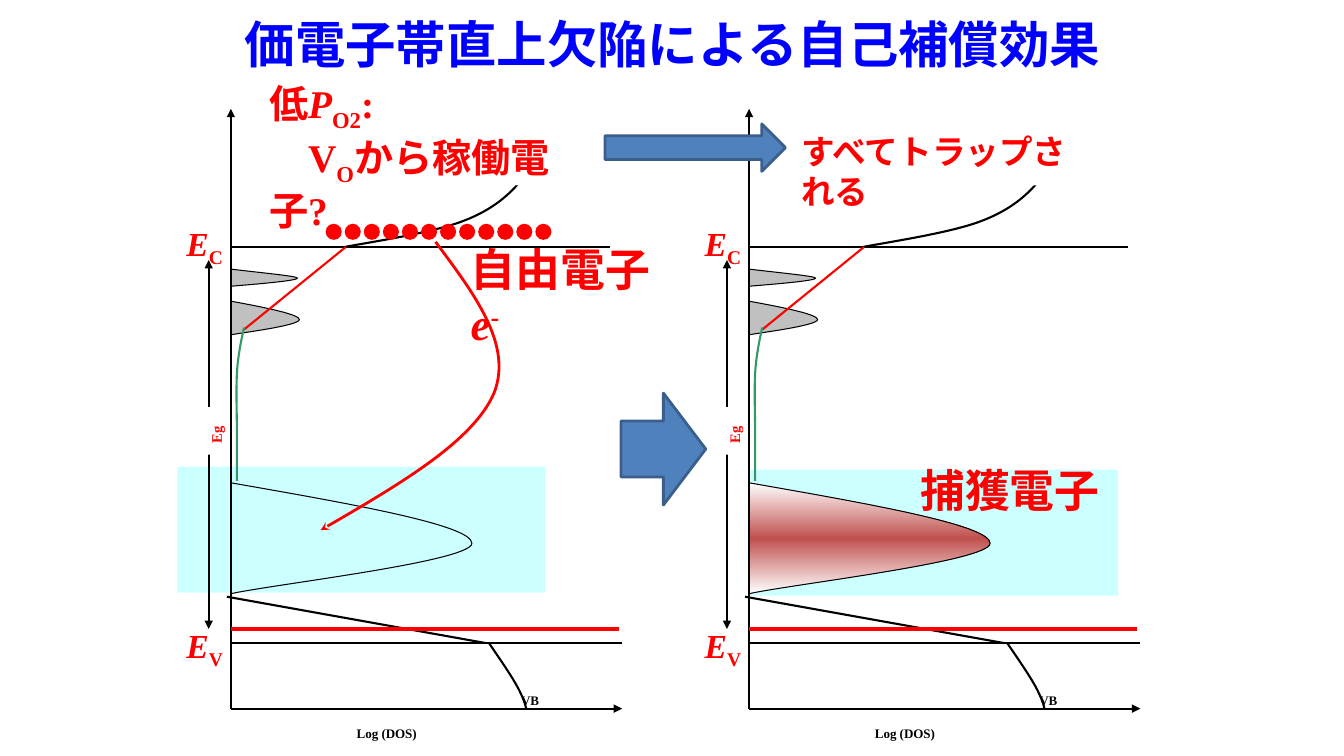
from copy import deepcopy

from pptx import Presentation
from pptx.dml.color import RGBColor
from pptx.enum.lang import MSO_LANGUAGE_ID
from pptx.enum.shapes import MSO_CONNECTOR, MSO_SHAPE
from pptx.enum.text import MSO_ANCHOR, PP_ALIGN
from pptx.oxml.ns import qn
from pptx.oxml.xmlchemy import OxmlElement
from pptx.util import Inches, Pt

BLACK = RGBColor(0x00, 0x00, 0x00)
WHITE = RGBColor(0xFF, 0xFF, 0xFF)
RED = RGBColor(0xFF, 0x00, 0x00)
BLUE = RGBColor(0x00, 0x00, 0xFF)
GREEN = RGBColor(0x33, 0x99, 0x66)
GRAY = RGBColor(0xC0, 0xC0, 0xC0)
CYAN = RGBColor(0xCC, 0xFF, 0xFF)
BRICK = RGBColor(0xC0, 0x50, 0x4D)
ARROW_FILL = RGBColor(0x4F, 0x81, 0xBD)
ARROW_LINE = RGBColor(0x3A, 0x5F, 0x8C)
SERIF = "Times New Roman"

CONDUCTION_BAND = [(1.13, 1.37), (1.33, 1.33), (2.01, 1.23), (2.31, 1.11),
                   (2.6, 1), (2.78, 0.84), (2.9, 0.68),
                   (3.03, 0.53), (3.02, 0.29), (3.05, 0.18)]
VALENCE_BAND = [(2.56, 5.3), (2.67, 5.46), (2.78, 5.62), (2.84, 5.73),
                (2.9, 5.84), (2.92, 5.91), (2.93, 5.95)]
DEEP_TAIL = [(0.06, 3.69), (0.06, 3.62), (0.06, 3.42), (0.06, 3.24),
             (0.06, 3.06), (0.05, 2.8), (0.06, 2.62),
             (0.07, 2.44), (0.11, 2.26), (0.13, 2.17)]
UPPER_DONOR = [(0, 1.59), (0.33, 1.63), (0.66, 1.66), (0.66, 1.68),
               (0.66, 1.71), (0.11, 1.75), (0, 1.76)]
LOWER_DONOR = [(0.01, 1.91), (0.34, 1.97), (0.68, 2.04), (0.68, 2.09),
               (0.68, 2.15), (0.12, 2.22), (0.01, 2.24)]
DEFECT = [(0, 3.71), (1.2, 3.92), (2.39, 4.13), (2.39, 4.31),
          (2.39, 4.49), (0.4, 4.72), (0, 4.81)]
TRAPPING = [(2.03, 1.32), (2.41, 1.83), (2.8, 2.34), (2.61, 2.82),
            (2.41, 3.29), (1.65, 3.74), (0.89, 4.18)]


def add_ends(sp, **ends):
    ln = sp.line._get_or_add_ln()
    for name in ("headEnd", "tailEnd"):
        if name in ends:
            end = OxmlElement(f"a:{name}")
            end.set("type", ends[name])
            ln.append(end)


def add_line(s, x1, y1, x2, y2, color=BLACK, width=1.5, **ends):
    c = s.shapes.add_connector(MSO_CONNECTOR.STRAIGHT, *map(Inches, (x1, y1, x2, y2)))
    c.line.color.rgb = color
    c.line.width = Pt(width)
    add_ends(c, **ends)
    c._element.spPr.append(OxmlElement("a:effectLst"))


def add_block(s, kind, x, y, w, h, fill, line=None):
    sp = s.shapes.add_shape(kind, *map(Inches, (x, y, w, h)))
    sp.shadow.inherit = False
    sp.fill.solid()
    sp.fill.fore_color.rgb = fill
    if line is None:
        sp.line.fill.background()
    else:
        sp.line.color.rgb = line
        sp.line.width = Pt(2)


def bend_segments(sp):
    outline = sp._element.spPr.find(".//" + qn("a:path"))
    segments = outline.findall(qn("a:lnTo"))
    for i in range(0, len(segments), 3):
        bezier = OxmlElement("a:cubicBezTo")
        for segment in segments[i:i + 3]:
            bezier.append(segment[0])
            outline.remove(segment)
        outline.append(bezier)


def add_curve(s, x, y, curve, color=BLACK, width=1.5, fill=None, **ends):
    points = [(Inches(x + px), Inches(y + py)) for px, py in curve]
    builder = s.shapes.build_freeform(*points[0], scale=1.0)
    builder.add_line_segments(points[1:], close=False)
    sp = builder.convert_to_shape()
    bend_segments(sp)
    sp.shadow.inherit = False
    if fill is None:
        sp.fill.background()
    else:
        sp.fill.solid()
        sp.fill.fore_color.rgb = fill
    sp.line.color.rgb = color
    sp.line.width = Pt(width)
    add_ends(sp, **ends)
    return sp


def fill_trapped(sp):
    sp.fill.gradient()
    sp.fill.gradient_angle = 90
    stops = sp._element.spPr.find(".//" + qn("a:gsLst"))
    stops.append(deepcopy(stops[0]))
    for stop, position, color in zip(sp.fill.gradient_stops, (0, 0.5, 1), (WHITE, BRICK, WHITE)):
        stop.position = position
        stop.color.rgb = color


def add_text(s, x, y, w, h, lines, size, color=RED, font=SERIF, anchor=MSO_ANCHOR.TOP,
             align=PP_ALIGN.LEFT, rotation=0):
    tb = s.shapes.add_textbox(*map(Inches, (x, y, w, h)))
    tb.rotation = rotation
    tf = tb.text_frame
    tf.word_wrap = True
    tf.vertical_anchor = anchor
    tf.margin_right = 0
    p = tf.paragraphs[0]
    p.alignment = align
    p.font.name, p.font.size, p.font.bold = font, Pt(size), True
    p.font.color.rgb = color
    for i, runs in enumerate(lines):
        if i:
            p.add_line_break()
        for text, style in runs:
            r = p.add_run()
            r.text = text
            r.font.language_id = MSO_LANGUAGE_ID.JAPANESE
            if style == "italic":
                r.font.italic = True
            elif style:
                r._r.get_or_add_rPr().set("baseline", {"sub": "-25000", "super": "30000"}[style])


def energy_diagram(s, x, y, band_x, band_y, trapped):
    add_block(s, MSO_SHAPE.RECTANGLE, x + band_x, y + band_y, 3.65, 1.25, CYAN)
    defect = add_curve(s, x, y, DEFECT, width=0.75)
    if trapped:
        fill_trapped(defect)
    for donor in (UPPER_DONOR, LOWER_DONOR):
        add_curve(s, x, y, donor, width=0.75, fill=GRAY)

    add_line(s, x, y + 1.37, x + 3.76, y + 1.37)
    add_line(s, x, y + 5.95, x + 3.88, y + 5.95, tailEnd="triangle")
    add_line(s, x, y + 5.3, x + 3.88, y + 5.3)
    add_line(s, x - 0.04, y + 4.84, x + 2.53, y + 5.3)
    add_curve(s, x, y, CONDUCTION_BAND)
    add_curve(s, x, y, VALENCE_BAND)
    for label, dx, dy, w in (("Log (DOS)", 1.15, 5.92, 1.24), ("VB", 2.78, 5.59, 0.51)):
        add_text(s, x + dx, y + dy, w, 0.37, [[(label, "sub")]], 16, BLACK)
    add_line(s, x + 0.13, y + 2.19, x + 1.14, y + 1.37, RED)
    add_curve(s, x, y, DEEP_TAIL, GREEN)
    add_line(s, x, y, x, y + 5.95, headEnd="triangle")
    add_line(s, x, y + 5.16, x + 3.85, y + 5.16, RED, 2.25)

    add_line(s, x - 0.22, y + 1.5, x - 0.22, y + 5.16, headEnd="triangle", tailEnd="triangle")
    add_block(s, MSO_SHAPE.RECTANGLE, x - 0.37, y + 2.96, 0.33, 0.47, WHITE)
    add_text(s, x - 0.5, y + 2.97, 0.5, 0.4, [[("Eg", "sub")]], 18, rotation=270)
    for band, dy in (("C", 1.08), ("V", 5.07)):
        add_text(s, x - 0.54, y + dy, 0.59, 0.5, [[("E", "italic"), (band, "sub")]], 24)
    add_block(s, MSO_SHAPE.RECTANGLE, x + 2.64, y + 0.1, 0.56, 0.66, WHITE)


def free_electrons(s, x, y):
    for i in range(12):
        add_block(s, MSO_SHAPE.OVAL, x + 0.94 + i * 2.08 / 11, y + 1.14, 0.16, 0.16, RED)
    add_text(s, x + 2.28, y + 1.27, 2, 0.64,
             [[("自由電子", None), ("e", "italic"), ("-", "super")]], 32)
    add_curve(s, x, y, TRAPPING, RED, 2, tailEnd="stealth")
    add_text(s, x + 0.28, y - 0.34, 3.43, 1.04,
             [[("低", None), ("P", "italic"), ("O2", "sub"), (":", None)],
              [("　V", None), ("O", "sub"), ("から稼働電子?", None)]], 28)


def trapped_electrons(s, x, y):
    add_text(s, x + 1.6, y + 3.46, 2, 0.64, [[("捕獲電子", None)]], 32)
    add_text(s, x + 0.42, y + 0.17, 3, 0.5, [[("すべてトラップされる", None)]], 24)


def main():
    prs = Presentation()
    prs.slide_width, prs.slide_height = Inches(13.33), Inches(7.5)
    s = prs.slides.add_slide(prs.slide_layouts[6])
    add_text(s, 1.67, 0, 9.9, 0.85, [[("価電子帯直上欠陥による自己補償効果", None)]], 36, BLUE,
             "Calibri", MSO_ANCHOR.MIDDLE, PP_ALIGN.CENTER)
    top, left_axis, right_axis = 1.08, 2.29, 7.43
    energy_diagram(s, left_axis, top, -0.53, 3.55, False)
    free_electrons(s, left_axis, top)
    energy_diagram(s, right_axis, top, 0.01, 3.58, True)
    trapped_electrons(s, right_axis, top)
    for box in ((6.16, 3.9, 0.84, 1.11), (6, 1.23, 1.79, 0.47)):
        add_block(s, MSO_SHAPE.RIGHT_ARROW, *box, ARROW_FILL, ARROW_LINE)
    prs.save("out.pptx")


if __name__ == "__main__":
    main()
